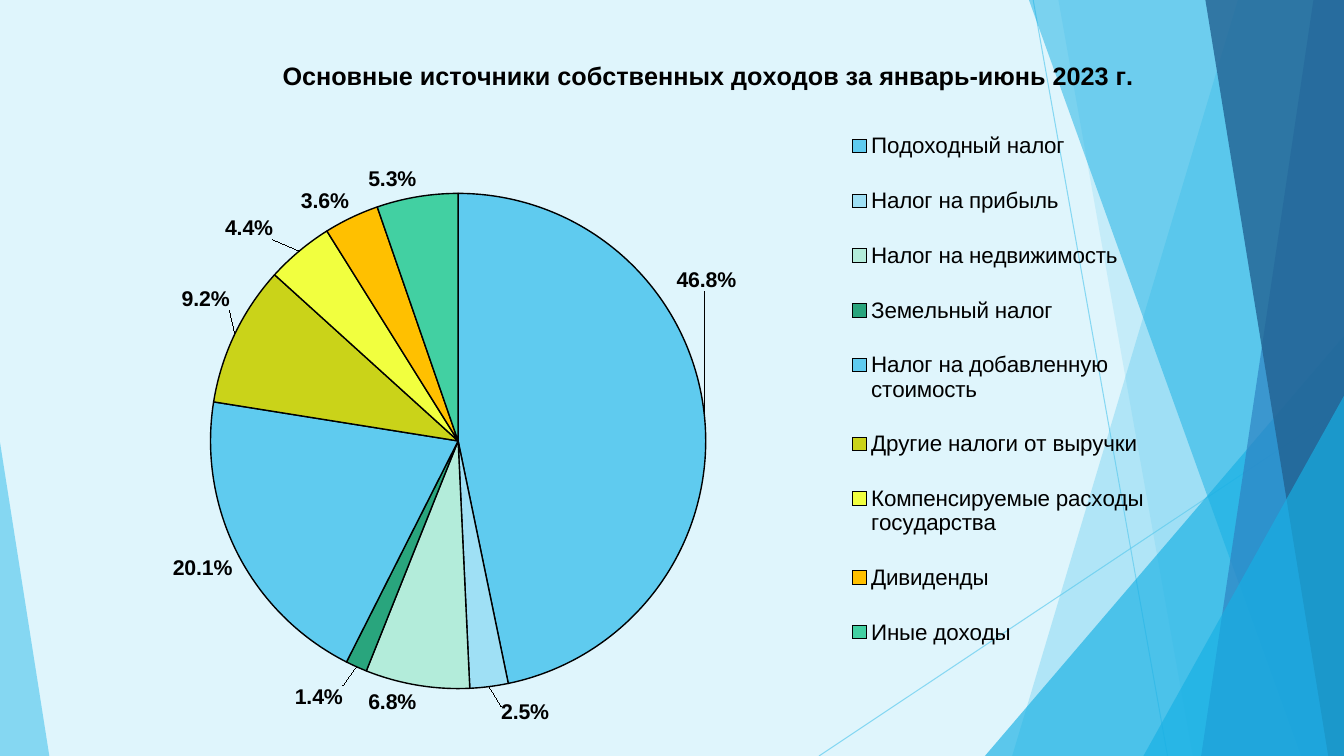
from typing import NamedTuple

from lxml.etree import SubElement
from pptx import Presentation
from pptx.chart.data import CategoryChartData
from pptx.dml.color import RGBColor
from pptx.enum.chart import XL_CHART_TYPE, XL_LABEL_POSITION, XL_LEGEND_POSITION
from pptx.enum.shapes import MSO_CONNECTOR, MSO_SHAPE
from pptx.oxml.ns import qn
from pptx.util import Pt

PX = 9525
WIDTH, HEIGHT = 1280, 720
FONT = "Arial"
COLORS = {
    "background": "DFF5FC", "black": "000000", "sky": "5FCBEF", "cyan": "17B0E4",
    "blue": "2E83C3", "navy": "226292", "pale": "9FE0F5", "mint": "B3ECDA",
    "green": "29A57D", "olive": "CAD319", "yellow": "F1FF3F", "amber": "FFC000",
    "emerald": "42D0A2",
}


class Ray(NamedTuple):
    x1: int
    y1: int
    x2: int
    y2: int


class Band(NamedTuple):
    """Area between a slanted edge and the right side of the slide."""
    top: int
    bottom: int
    color: str
    alpha: int


class Corner(NamedTuple):
    x: int
    y: int
    w: int
    h: int
    tip: int
    color: str
    alpha: int


class Slice(NamedTuple):
    name: str
    value: float
    color: str
    shift: tuple[float, float] = (0, 0)


RAYS = [Ray(984, 0, 1112, 720), Ray(1280, 387, 780, 720)]
DECOR = [
    Band(1179, 964, "sky", 36),
    Band(1008, 1136, "sky", 20),
    Corner(938, 320, 342, 400, 1, "cyan", 66),
    Band(980, 1239, "cyan", 50),
    Band(1251, 1144, "blue", 70),
    Band(1148, 1265, "navy", 80),
    Corner(1089, 377, 191, 343, 1, "cyan", 66),
    Corner(0, 421, 47, 299, 0, "sky", 70),
]
SLICES = [
    Slice("Подоходный налог", 46.8, "sky", (-0.03, -0.18)),
    Slice("Налог на прибыль", 2.5, "pale", (0.01, 0.02)),
    Slice("Налог на недвижимость", 6.8, "mint"),
    Slice("Земельный налог", 1.4, "green", (-0.01, 0.02)),
    Slice("Налог на добавленную стоимость", 20.1, "sky"),
    Slice("Другие налоги от выручки", 9.2, "olive", (0, -0.03)),
    Slice("Компенсируемые расходы государства", 4.4, "yellow", (-0.02, -0.01)),
    Slice("Дивиденды", 3.6, "amber"),
    Slice("Иные доходы", 5.3, "emerald"),
]


def rgb(name: str) -> RGBColor:
    return RGBColor.from_string(COLORS[name])


def set_alpha(element, percent: int) -> None:
    color = next(element.iter(qn("a:srgbClr")))
    SubElement(color, qn("a:alpha"), val=str(percent * 1000))


def paint(s, color: str, alpha: int) -> None:
    s.shadow.inherit = False
    s.fill.solid()
    s.fill.fore_color.rgb = rgb(color)
    set_alpha(s.fill._xPr, alpha)
    s.line.fill.background()


def add_ray(shapes, ray: Ray) -> None:
    s = shapes.add_connector(MSO_CONNECTOR.STRAIGHT, *(v * PX for v in ray))
    s.line.color.rgb = rgb("sky")
    s.line.width = Pt(0.75)
    sp_pr = s._element.spPr
    set_alpha(sp_pr, 70)
    SubElement(sp_pr, qn("a:effectLst"))


def add_band(shapes, band: Band) -> None:
    builder = shapes.build_freeform(band.top, 0, scale=PX)
    builder.add_line_segments([(WIDTH, 0), (WIDTH, HEIGHT), (band.bottom, HEIGHT)])
    paint(builder.convert_to_shape(), band.color, band.alpha)


def add_corner(shapes, c: Corner) -> None:
    s = shapes.add_shape(MSO_SHAPE.ISOSCELES_TRIANGLE, *(v * PX for v in c[:4]))
    s.adjustments[0] = c.tip
    paint(s, c.color, c.alpha)


def set_font(font, size: float, bold: bool) -> None:
    font.name, font.size, font.bold = FONT, Pt(size), bold
    font.color.rgb = rgb("black")


def set_layout(parent, index: int, **values) -> None:
    for old in parent.findall(qn("c:layout")):
        parent.remove(old)
    layout = SubElement(parent, qn("c:layout"))
    manual = SubElement(layout, qn("c:manualLayout"))
    for tag, value in values.items():
        SubElement(manual, qn(f"c:{tag}"), val=str(value))
    parent.insert(index, layout)


def add_pie(shapes) -> None:
    data = CategoryChartData()
    data.categories = [item.name for item in SLICES]
    data.add_series("Series 1", [item.value for item in SLICES])
    box = (104 * PX, 33 * PX, 1072 * PX, 656 * PX)
    chart = shapes.add_chart(XL_CHART_TYPE.PIE, *box, data).chart
    set_font(chart.font, 15.5, False)
    edges = {"xMode": "edge", "yMode": "edge"}

    # Title, plot and legend placement
    chart.has_title = True
    tf = chart.chart_title.text_frame
    tf.text = "Основные источники собственных доходов за январь-июнь 2023 г."
    set_font(tf.paragraphs[0].runs[0].font, 18, True)
    set_layout(chart.chart_title._element, 1, **edges, x=0.15, y=0.03)
    plot_area = chart._chartSpace.chart.plotArea
    set_layout(plot_area, 0, layoutTarget="inner", **edges, x=0.09, y=0.21, w=0.44, h=0.76)
    chart.has_legend = True
    legend = chart.legend
    legend.position = XL_LEGEND_POSITION.RIGHT
    legend.include_in_layout = False
    set_font(legend.font, 16, False)
    set_layout(legend._element, 1, **edges, x=0.65, y=0.1, w=0.28, h=0.83)

    # Percent labels
    chart.plots[0].vary_by_categories = True
    series = chart.plots[0].series[0]
    labels = series.data_labels
    labels.show_percentage, labels.show_value = True, False
    labels.number_format, labels.number_format_is_linked = "0.0%", False
    labels.position = XL_LABEL_POSITION.OUTSIDE_END
    set_font(labels.font, 15.2, True)

    # Slices and shifted labels
    for i, item in enumerate(SLICES):
        point = series.points[i]
        point.format.fill.solid()
        point.format.fill.fore_color.rgb = rgb(item.color)
        point.format.line.color.rgb = rgb("black")
        point.format.line.width = Pt(1)
        if any(item.shift):
            set_font(point.data_label.font, 15.2, True)
            point.data_label.position = XL_LABEL_POSITION.OUTSIDE_END
    shifted = [item for item in SLICES if any(item.shift)]
    for item, label in zip(shifted, labels._element.findall(qn("c:dLbl"))):
        x, y = item.shift
        set_layout(label, 1, x=x, y=y)
        number = SubElement(label, qn("c:numFmt"), formatCode="0.0%", sourceLinked="0")
        label.insert(2, number)
        label.find(qn("c:showVal")).set("val", "0")
        label.find(qn("c:showPercent")).set("val", "1")


def main() -> None:
    prs = Presentation()
    prs.slide_width, prs.slide_height = WIDTH * PX, HEIGHT * PX
    slide = prs.slides.add_slide(prs.slide_layouts[6])
    slide.background.fill.solid()
    slide.background.fill.fore_color.rgb = rgb("background")

    # Decorative facets
    for ray in RAYS:
        add_ray(slide.shapes, ray)
    for part in DECOR:
        if isinstance(part, Band):
            add_band(slide.shapes, part)
        else:
            add_corner(slide.shapes, part)

    add_pie(slide.shapes)
    prs.save("out.pptx")


if __name__ == "__main__":
    main()
